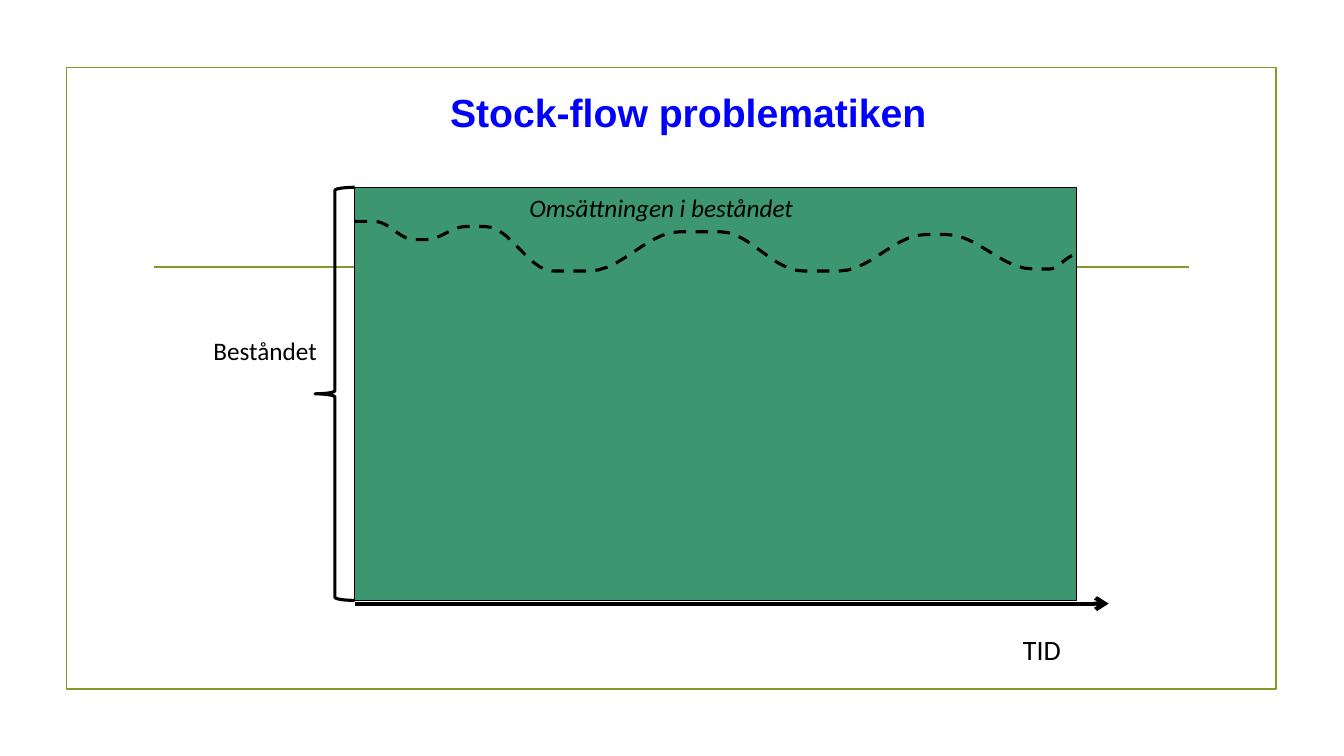
import collections
import dataclasses
import math

import pptx
import pptx.dml.color
import pptx.enum.dml
import pptx.enum.shapes
import pptx.enum.text
import pptx.oxml
import pptx.oxml.ns
import pptx.util

Cm = pptx.util.Cm
Pt = pptx.util.Pt
SHAPE = pptx.enum.shapes.MSO_SHAPE
ANCHOR = pptx.enum.text.MSO_ANCHOR
ALIGN = pptx.enum.text.PP_ALIGN


@dataclasses.dataclass(frozen=True)
class Theme:
    olive: str = "83992A"
    green: str = "3C9770"
    black: str = "000000"
    blue: str = "0000FF"
    heading_font: str = "Arial"
    body_font: str = "Calibri"
    heading_size: int = 28
    axis_size: int = 20
    label_size: int = 18
    frame_width: float = 1.25
    stock_width: float = 0.75
    curve_width: float = 2.25
    axis_width: float = 3


@dataclasses.dataclass(frozen=True)
class Box:
    """Left, top, width and height in centimetres."""
    left: float
    top: float
    width: float
    height: float

    @property
    def right(self):
        return self.left + self.width

    @property
    def bottom(self):
        return self.top + self.height

    def lengths(self):
        return [Cm(v) for v in (self.left, self.top, self.width, self.height)]


THEME = Theme()

# The turnover curve rests on these levels and swings smoothly between them;
# centimetres from the top left corner of the stock area
Level = collections.namedtuple("Level", "start end depth")
TURNOVER_LEVELS = [
    Level(0, 0.5, 0.86),
    Level(1.5, 1.8, 1.32),
    Level(2.8, 3.3, 0.99),
    Level(5, 5.9, 2.11),
    Level(8.2, 9.2, 1.12),
    Level(11.3, 12.2, 2.11),
    Level(14.4, 14.9, 1.19),
    Level(17.1, 17.5, 2.06),
    Level(18.19, 18.19, 1.7),
]
SWING_STEPS = 10


def rgb(color):
    return pptx.dml.color.RGBColor.from_string(color)


def set_all(target, values):
    for name, value in values.items():
        setattr(target, name, value)


def drawing_element(tag, attributes=""):
    return pptx.oxml.parse_xml(
        f'<a:{tag} {pptx.oxml.ns.nsdecls("a")} {attributes}/>')


def write(shape, text, color, font, frame, alignment=ALIGN.LEFT):
    """Put one formatted paragraph into a shape."""
    set_all(shape.text_frame, frame)
    paragraph = shape.text_frame.paragraphs[0]
    paragraph.text = text
    paragraph.alignment = alignment
    set_all(paragraph.font, font)
    paragraph.font.color.rgb = rgb(color)


def outline(shape, color, width, fill=None):
    shape.shadow.inherit = False
    shape.line.color.rgb = rgb(color)
    shape.line.width = Pt(width)
    if fill:
        shape.fill.solid()
        shape.fill.fore_color.rgb = rgb(fill)
    else:
        shape.fill.background()


def add_horizontal(slide, left, right, y, color, weight):
    line = slide.shapes.add_connector(
        pptx.enum.shapes.MSO_CONNECTOR.STRAIGHT,
        Cm(left), Cm(y), Cm(right), Cm(y))
    line.line.color.rgb = rgb(color)
    line.line.width = Pt(weight)
    line._element.spPr.append(drawing_element("effectLst"))
    return line


def add_label(slide, box, text, size):
    label = slide.shapes.add_textbox(*box.lengths())
    write(label, text, THEME.black,
          {"name": THEME.body_font, "size": Pt(size)},
          {"word_wrap": False,
           "auto_size": pptx.enum.text.MSO_AUTO_SIZE.SHAPE_TO_FIT_TEXT})


def add_frame(slide, box):
    """Draw the slide border and the rule that crosses it."""
    rule_inset, rule_drop = 2.2, 5.03
    border = slide.shapes.add_shape(SHAPE.RECTANGLE, *box.lengths())
    outline(border, THEME.olive, THEME.frame_width)
    add_horizontal(slide, box.left + rule_inset, box.right - rule_inset,
                   box.top + rule_drop, THEME.olive, THEME.frame_width)


def add_title(slide, box):
    title = slide.shapes.title
    set_all(title, dict(zip(("left", "top", "width", "height"), box.lengths())))
    write(title, "Stock-flow problematiken", THEME.blue,
          {"name": THEME.heading_font, "size": Pt(THEME.heading_size), "bold": True},
          {"vertical_anchor": ANCHOR.MIDDLE, "word_wrap": True}, ALIGN.CENTER)


def add_stock(slide, box):
    stock = slide.shapes.add_shape(SHAPE.RECTANGLE, *box.lengths())
    outline(stock, THEME.black, THEME.stock_width, THEME.green)
    write(stock, "Omsättningen i beståndet", THEME.black,
          {"name": THEME.body_font, "size": Pt(THEME.label_size), "italic": True},
          {"vertical_anchor": ANCHOR.TOP, "margin_left": Cm(4.4)})


def turnover_points():
    """Join neighbouring levels with half a cosine wave each."""
    points = [(TURNOVER_LEVELS[0].start, TURNOVER_LEVELS[0].depth)]
    for level, following in zip(TURNOVER_LEVELS, TURNOVER_LEVELS[1:]):
        for step in range(SWING_STEPS + 1):
            share = step / SWING_STEPS
            eased = (1 - math.cos(math.pi * share)) / 2
            points.append((
                level.end + share * (following.start - level.end),
                level.depth + eased * (following.depth - level.depth)))
    return points


def add_turnover(slide, box):
    start, *rest = [(Cm(box.left + x), Cm(box.top + y))
                    for x, y in turnover_points()]
    builder = slide.shapes.build_freeform(*start)
    builder.add_line_segments(rest, close=False)
    curve = builder.convert_to_shape()
    outline(curve, THEME.black, THEME.curve_width)
    curve.line.dash_style = pptx.enum.dml.MSO_LINE.DASH


def add_stock_brace(slide, box):
    """Mark the full height of the stock area on its left side."""
    brace_width, label_width, label_gap, label_drop = 1, 3.23, 0.58, 3.61
    brace = slide.shapes.add_shape(
        SHAPE.LEFT_BRACE,
        *Box(box.left - brace_width, box.top, brace_width, box.height).lengths())
    brace.adjustments[0] = 0.08
    outline(brace, THEME.black, THEME.curve_width)
    add_label(slide, Box(box.left - label_gap - label_width,
                         box.top + label_drop, label_width, 1.02),
              "Beståndet", THEME.label_size)


def add_time_axis(slide, box):
    """Draw the time arrow just below the stock area, past its right edge."""
    axis_gap, overshoot, label_width, label_drop = 0.08, 0.81, 1.5, 0.69
    axis = add_horizontal(slide, box.left, box.right + overshoot,
                          box.bottom + axis_gap, THEME.black, THEME.axis_width)
    axis.line._get_or_add_ln().append(drawing_element("tailEnd", 'type="arrow"'))
    add_label(slide, Box(box.right - 0.1 - label_width, box.bottom + label_drop,
                         label_width, 1.12), "TID", THEME.axis_size)


def main():
    deck = pptx.Presentation()
    set_all(deck, {"slide_width": Cm(33.87), "slide_height": Cm(19.05)})
    slide = deck.slides.add_slide(deck.slide_layouts.get_by_name("Title Only"))
    add_frame(slide, Box(1.68, 1.7, 30.48, 15.67))
    add_title(slide, Box(6.55, 1.24, 21.59, 3.18))
    stock_area = Box(8.94, 4.72, 18.19, 10.41)
    for add_part in (add_stock, add_turnover, add_stock_brace, add_time_axis):
        add_part(slide, stock_area)
    deck.save("out.pptx")


if __name__ == "__main__":
    main()
